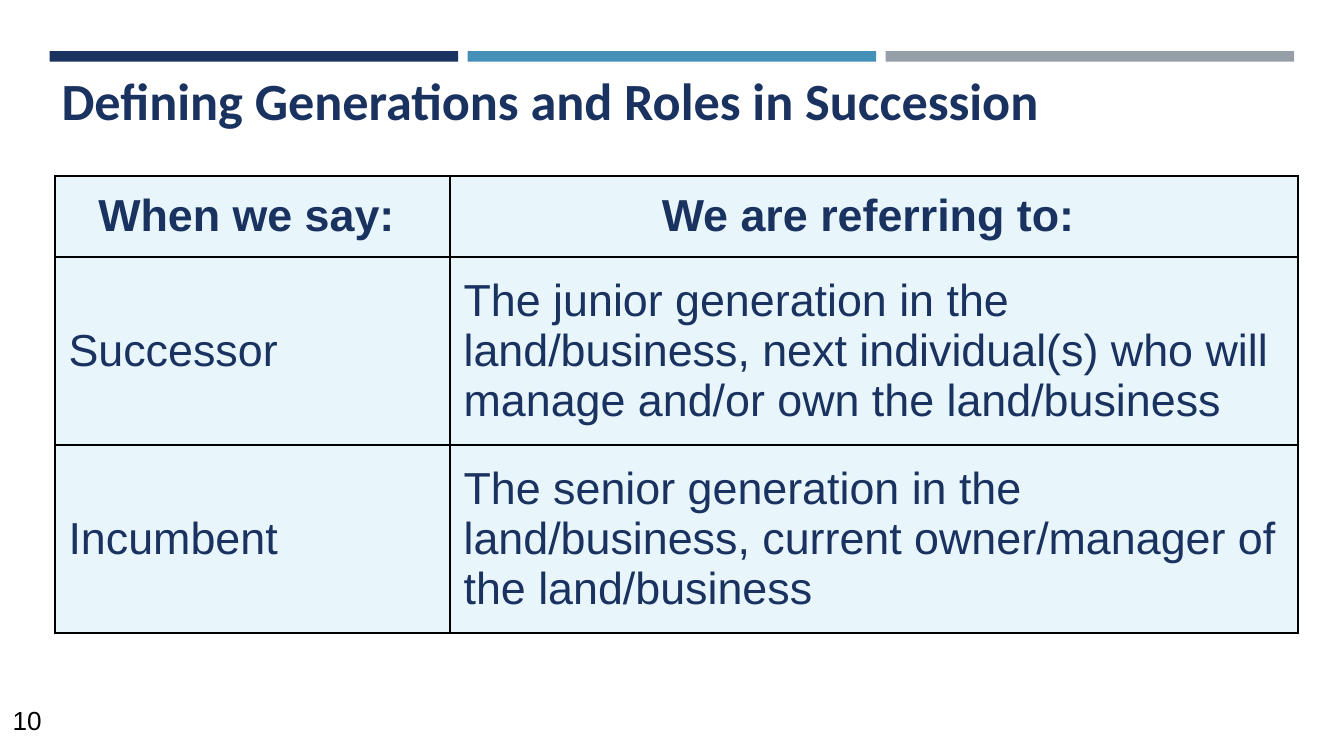
"""Build a slide that defines generations and roles in succession."""
from lxml import etree
from pptx import Presentation
from pptx.dml.color import RGBColor
from pptx.enum.shapes import MSO_SHAPE
from pptx.enum.text import MSO_ANCHOR, PP_ALIGN
from pptx.oxml.ns import qn
from pptx.util import Inches, Pt

RECT = MSO_SHAPE.RECTANGLE
MIDDLE = MSO_ANCHOR.MIDDLE
LEFT, CENTER, RIGHT = PP_ALIGN.LEFT, PP_ALIGN.CENTER, PP_ALIGN.RIGHT
COLORS = {"navy": "1A3260", "blue": "4590B8", "gray": "969FA7",
          "pale": "E8F6FB", "black": "000000"}
TITLE = {"name": "Calibri", "size": Pt(28), "bold": True}
HEAD = {"name": "Arial", "size": Pt(24), "bold": True}
BODY = {**HEAD, "bold": False}
NUMBER = {**BODY, "size": Pt(14)}


def write(box, text, font, color="navy", align=LEFT, inset=0.1):
    margins = {"margin_left": 0.1, "margin_right": 0.1,
               "margin_top": inset, "margin_bottom": inset}
    target = box if hasattr(box, "margin_left") else box.text_frame
    for name, value in margins.items():
        setattr(target, name, Inches(value))
    p = box.text_frame.paragraphs[0]
    p.alignment = align
    r = p.add_run()
    r.text = text
    for name, value in font.items():
        setattr(r.font, name, value)
    r.font.color.rgb = RGBColor.from_string(COLORS[color])
    return p


def add_borders(cell):
    tc_pr = cell._tc.get_or_add_tcPr()
    for i, side in enumerate(("lnL", "lnR", "lnT", "lnB")):
        ln = etree.Element(qn(f"a:{side}"), w=str(Pt(1)))
        fill = etree.SubElement(ln, qn("a:solidFill"))
        etree.SubElement(fill, qn("a:srgbClr"), val=COLORS["black"])
        tc_pr.insert(i, ln)


prs = Presentation()
prs.slide_width, prs.slide_height = Inches(10), Inches(5.625)
s = prs.slides.add_slide(prs.slide_layouts[6])

for i, color in enumerate(("navy", "blue", "gray")):
    sp = s.shapes.add_shape(RECT, Inches(0.37 + i * 3.11), Inches(0.38),
                            Inches(3.04), Inches(0.08))
    sp.shadow.inherit = False
    sp.fill.solid()
    sp.fill.fore_color.rgb = RGBColor.from_string(COLORS[color])
    sp.line.fill.background()

title = s.shapes.add_textbox(Inches(0.36), Inches(0.34), Inches(9.29), Inches(0.76))
title.text_frame.word_wrap = True
p = write(title, "Defining Generations and Roles in Succession", TITLE)
p.line_spacing = 1.15

rows = [
    ("When we say: ", "We are referring to: "),
    ("Successor", "The junior generation in the land/business, next individual(s) "
                  "who will manage and/or own the land/business"),
    ("Incumbent", "The senior generation in the land/business, current "
                  "owner/manager of the land/business"),
]
table = s.shapes.add_table(3, 2, Inches(0.41), Inches(1.31),
                           Inches(9.25), Inches(1.38)).table
table.first_row = table.horz_banding = False
for column, width in zip(table.columns, (2.94, 6.31)):
    column.width = Inches(width)
for row, height in zip(table.rows, (0.42, 0.42, 0.54)):
    row.height = Inches(height)
for i, texts in enumerate(rows):
    font, align = (BODY, LEFT) if i else (HEAD, CENTER)
    for j, text in enumerate(texts):
        cell = table.cell(i, j)
        cell.vertical_anchor = MIDDLE
        cell.fill.solid()
        cell.fill.fore_color.rgb = RGBColor.from_string(COLORS["pale"])
        add_borders(cell)
        write(cell, text, font, align=align)

number = s.shapes.add_textbox(Inches(-0.19), Inches(5.19), Inches(0.6), Inches(0.43))
number.text_frame.word_wrap = True
write(number, "10", NUMBER, "black", RIGHT, 0.05)

prs.save("out.pptx")
